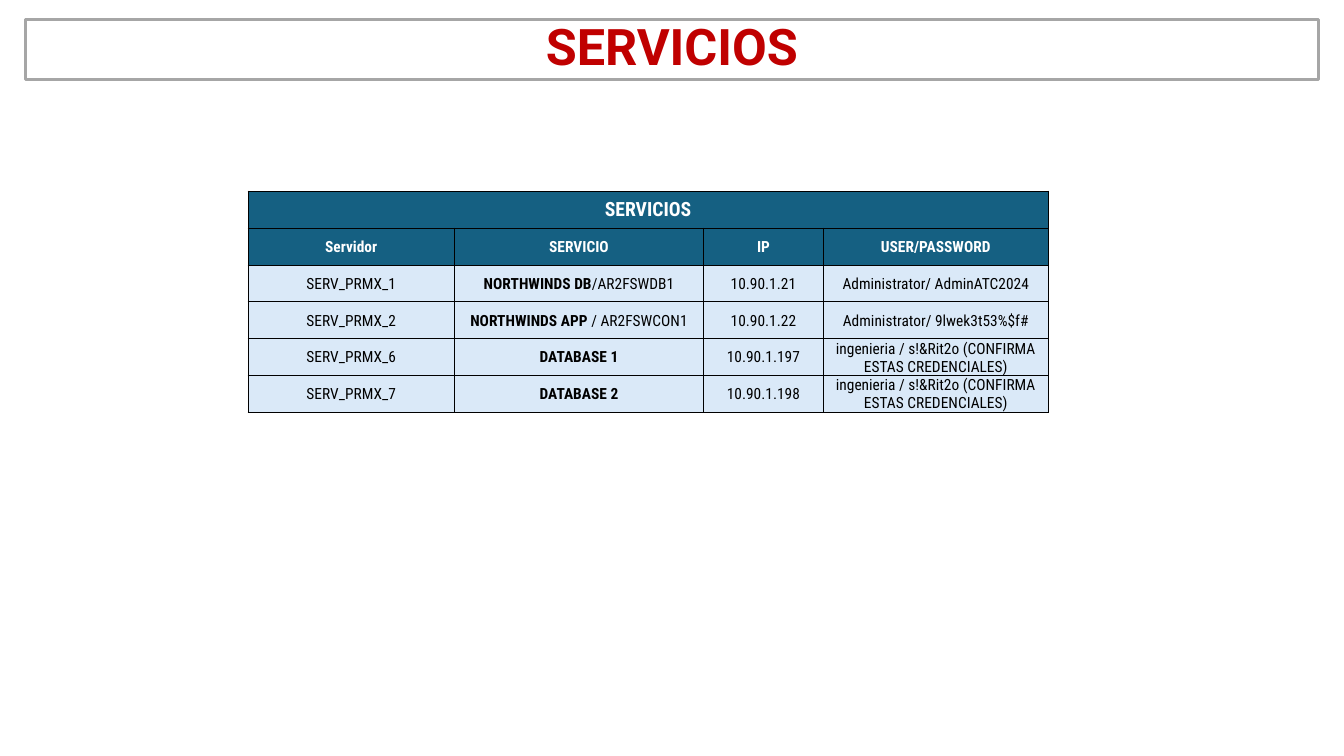
"""Build the SERVICIOS slide: a framed title and a table of servers."""
from lxml.etree import SubElement
from pptx import Presentation
from pptx.dml.color import RGBColor
from pptx.enum.text import MSO_ANCHOR as Anchor, MSO_AUTO_SIZE as AutoSize, PP_ALIGN as Align
from pptx.oxml.ns import qn
from pptx.util import Pt

COLORS = {
    "white": "FFFFFF",
    "black": "000000",
    "title": "C00000",
    "frame": "A6A6A6",
    "header": "156082",
    "body": "DAE9F8",
}
CREDENTIALS = "ingenieria / s!&Rit2o (CONFIRMA ESTAS CREDENCIALES)"
HEADER_ROWS = [
    ["SERVICIOS", "", "", ""],
    ["Servidor", "SERVICIO", "IP", "USER/PASSWORD"],
]
SERVER_ROWS = [
    ["SERV_PRMX_1", ("NORTHWINDS DB", "/AR2FSWDB1"), "10.90.1.21", "Administrator/ AdminATC2024"],
    ["SERV_PRMX_2", ("NORTHWINDS APP", " / AR2FSWCON1"), "10.90.1.22", "Administrator/ 9lwek3t53%$f#"],
    ["SERV_PRMX_6", ("DATABASE 1", ""), "10.90.1.197", CREDENTIALS],
    ["SERV_PRMX_7", ("DATABASE 2", ""), "10.90.1.198", CREDENTIALS],
]
COLUMN_WIDTHS = [147.6, 177.84, 85.68, 160.56]
ROW_HEIGHT = 26.4


def style_run(run, font, size, color, bold):
    run.font.name = font
    run.font.size = Pt(size)
    run.font.bold = bold
    run.font.color.rgb = RGBColor.from_string(COLORS[color])


def add_borders(cell):
    properties = cell._tc.get_or_add_tcPr()
    for side in ("a:lnL", "a:lnR", "a:lnT", "a:lnB"):
        line = SubElement(properties, qn(side), w=str(Pt(0.5)))
        fill = SubElement(line, qn("a:solidFill"))
        SubElement(fill, qn("a:srgbClr"), val=COLORS["black"])


presentation = Presentation()
presentation.slide_width = Pt(960)
presentation.slide_height = Pt(540)
slide = presentation.slides.add_slide(presentation.slide_layouts[5])

title = slide.shapes.title
title.left, title.top, title.width, title.height = Pt(18), Pt(14.2), Pt(924), Pt(42.6)
title.fill.solid()
title.fill.fore_color.rgb = RGBColor.from_string(COLORS["white"])
title.line.color.rgb = RGBColor.from_string(COLORS["frame"])
title.line.width = Pt(2.25)
title.text_frame.text = "SERVICIOS"
title.text_frame.auto_size = AutoSize.NONE
title.text_frame.vertical_anchor = Anchor.MIDDLE
heading = title.text_frame.paragraphs[0]
heading.alignment = Align.CENTER
heading.line_spacing = 0.9
style_run(heading.runs[0], "Roboto", 36, "title", True)

rows = HEADER_ROWS + SERVER_ROWS
table = slide.shapes.add_table(
    len(rows), len(COLUMN_WIDTHS), Pt(177.12), Pt(136.4),
    Pt(sum(COLUMN_WIDTHS)), Pt(ROW_HEIGHT * len(rows)),
).table
for column, width in zip(table.columns, COLUMN_WIDTHS):
    column.width = Pt(width)
table.cell(0, 0).merge(table.cell(0, len(COLUMN_WIDTHS) - 1))

for row_index, row in enumerate(rows):
    table.rows[row_index].height = Pt(ROW_HEIGHT)
    is_header = row_index < len(HEADER_ROWS)
    for column_index, content in enumerate(row):
        cell = table.cell(row_index, column_index)
        add_borders(cell)
        cell.fill.solid()
        cell.fill.fore_color.rgb = RGBColor.from_string(COLORS["header" if is_header else "body"])
        cell.vertical_anchor = Anchor.MIDDLE
        cell.margin_left = cell.margin_right = cell.margin_top = Pt(0.7)
        cell.margin_bottom = Pt(0)
        paragraph = cell.text_frame.paragraphs[0]
        paragraph.alignment = Align.CENTER
        strong, plain = content if isinstance(content, tuple) else ("", content)
        for text, bold in ((strong, True), (plain, is_header)):
            if text:
                run = paragraph.add_run()
                run.text = text
                style_run(run, "Roboto Condensed", 14 if row_index == 0 else 11,
                          "white" if is_header else "black", bold)

presentation.save("out.pptx")
